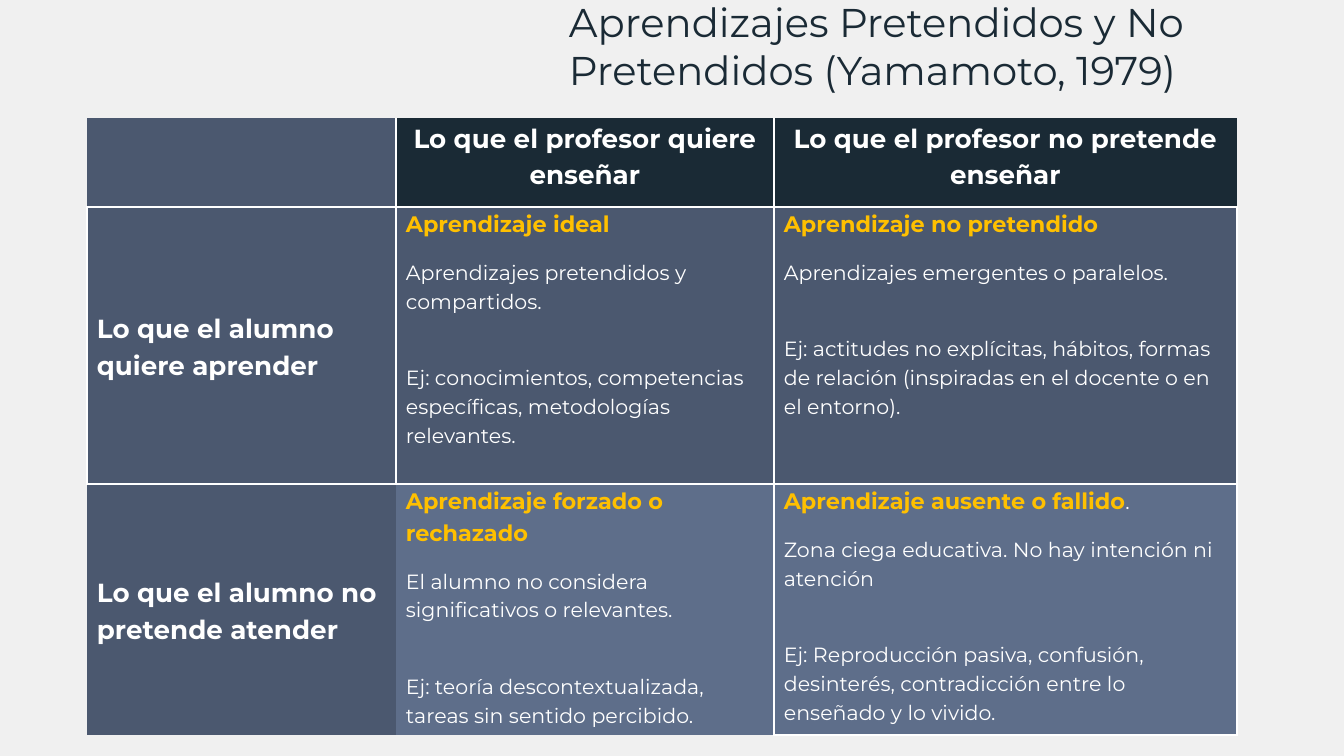
from lxml.etree import SubElement
from pptx import Presentation
from pptx.dml.color import RGBColor
from pptx.enum.text import MSO_ANCHOR, PP_ALIGN
from pptx.oxml.ns import qn
from pptx.util import Pt

TITLE = "Aprendizajes Pretendidos y No Pretendidos (Yamamoto, 1979)"
COLUMN_HEADS = ["Lo que el profesor quiere enseñar", "Lo que el profesor no pretende enseñar"]
ROW_HEADS = ["Lo que el alumno quiere aprender", "Lo que el alumno no pretende atender"]
LEARNINGS = [
    [
        ("Aprendizaje ideal", "",
         "Aprendizajes pretendidos y compartidos.",
         "Ej: conocimientos, competencias específicas, metodologías relevantes."),
        ("Aprendizaje no pretendido", "",
         "Aprendizajes emergentes o paralelos.",
         "Ej: actitudes no explícitas, hábitos, formas de relación "
         "(inspiradas en el docente o en el entorno)."),
    ],
    [
        ("Aprendizaje forzado o rechazado", "",
         "El alumno no considera significativos o relevantes.",
         "Ej: teoría descontextualizada, tareas sin sentido percibido."),
        ("Aprendizaje ausente o fallido", ".",
         "Zona ciega educativa. No hay intención ni atención",
         "Ej: Reproducción pasiva, confusión, desinterés, "
         "contradicción entre lo enseñado y lo vivido."),
    ],
]

PAPER = RGBColor(0xF0, 0xF0, 0xF0)
NAVY = RGBColor(0x1A, 0x2A, 0x35)
SLATE = RGBColor(0x4B, 0x58, 0x6F)
STEEL = RGBColor(0x5E, 0x6E, 0x8A)
GOLD = RGBColor(0xFF, 0xC0, 0x00)
WHITE = RGBColor(0xFF, 0xFF, 0xFF)

FORMATS = {
    "title": {"size": Pt(21.5), "bold": False, "color": NAVY},
    "head": {"size": Pt(14), "bold": True, "color": WHITE},
    "name": {"size": Pt(12), "bold": True, "color": GOLD},
    "detail": {"size": Pt(11), "bold": False, "color": WHITE},
}
COLUMN_WIDTHS = [309, 378, 463]
ROW_HEIGHTS = [89, 277, 251]
FILLS = [[SLATE, NAVY, NAVY], [SLATE, SLATE, SLATE], [SLATE, STEEL, STEEL]]
EDGES = [["RB", "LRB", "LB"], ["LRTB", "LRTB", "LRTB"], ["T", "RT", "LRTB"]]


def px(length):
    return round(length * 914400 / 134.4)


def add_run(paragraph, text, kind):
    run = paragraph.add_run()
    run.text = text
    run.font.name = "Montserrat"
    for attribute, value in FORMATS[kind].items():
        if attribute == "color":
            run.font.color.rgb = value
        else:
            setattr(run.font, attribute, value)


def write_cell(cell, paragraphs, alignment):
    for index, (runs, gap) in enumerate(paragraphs):
        frame = cell.text_frame
        paragraph = frame.add_paragraph() if index else frame.paragraphs[0]
        layout = {"alignment": alignment, "line_spacing": 1.15,
                  "space_before": Pt(gap), "space_after": Pt(10)}
        for attribute, value in layout.items():
            setattr(paragraph, attribute, value)
        for text, kind in runs:
            add_run(paragraph, text, kind)


def style_cell(cell, fill, edges, anchor):
    margins = {"margin_left": px(10), "margin_right": px(10),
               "margin_top": 0, "margin_bottom": 0, "vertical_anchor": anchor}
    for attribute, value in margins.items():
        setattr(cell, attribute, value)
    properties = cell._tc.get_or_add_tcPr()
    for side in "LRTB":
        line = SubElement(properties, qn(f"a:ln{side}"), w=str(Pt(1)))
        if side in edges:
            paint = SubElement(line, qn("a:solidFill"))
            SubElement(paint, qn("a:srgbClr"), val=str(WHITE))
        else:
            SubElement(line, qn("a:noFill"))
    cell.fill.solid()
    cell.fill.fore_color.rgb = fill


def cell_paragraphs(row, column):
    if row == 0 and column == 0:
        return []
    if row == 0:
        return [([(COLUMN_HEADS[column - 1], "head")], 0)]
    if column == 0:
        return [([(ROW_HEADS[row - 1], "head")], 0)]
    name, ending, meaning, example = LEARNINGS[row - 1][column - 1]
    name_runs = [(name, "name")] + ([(ending, "detail")] if ending else [])
    return [(name_runs, 0), ([(meaning, "detail")], 0), ([(example, "detail")], 15.4)]


def main():
    presentation = Presentation()
    presentation.slide_width, presentation.slide_height = px(1344), px(756)
    slide = presentation.slides.add_slide(presentation.slide_layouts[6])
    slide.background.fill.solid()
    slide.background.fill.fore_color.rgb = PAPER

    title = slide.shapes.add_textbox(px(556), px(-16), px(788), px(73)).text_frame
    frame_format = {"word_wrap": True, "vertical_anchor": MSO_ANCHOR.TOP,
                    "margin_left": px(13), "margin_right": px(13),
                    "margin_top": px(13), "margin_bottom": px(13)}
    for attribute, value in frame_format.items():
        setattr(title, attribute, value)
    add_run(title.paragraphs[0], TITLE, "title")

    matrix = slide.shapes.add_table(
        len(ROW_HEIGHTS), len(COLUMN_WIDTHS), px(87), px(118),
        px(sum(COLUMN_WIDTHS)), px(sum(ROW_HEIGHTS))).table
    matrix.first_row = matrix.horz_banding = False
    for column, width in zip(matrix.columns, COLUMN_WIDTHS):
        column.width = px(width)
    for row, height in zip(matrix.rows, ROW_HEIGHTS):
        row.height = px(height)

    for row in range(len(ROW_HEIGHTS)):
        for column in range(len(COLUMN_WIDTHS)):
            cell = matrix.cell(row, column)
            anchor = MSO_ANCHOR.MIDDLE if row and not column else MSO_ANCHOR.TOP
            style_cell(cell, FILLS[row][column], EDGES[row][column], anchor)
            alignment = PP_ALIGN.LEFT if row else PP_ALIGN.CENTER
            write_cell(cell, cell_paragraphs(row, column), alignment)

    presentation.save("out.pptx")


if __name__ == "__main__":
    main()
